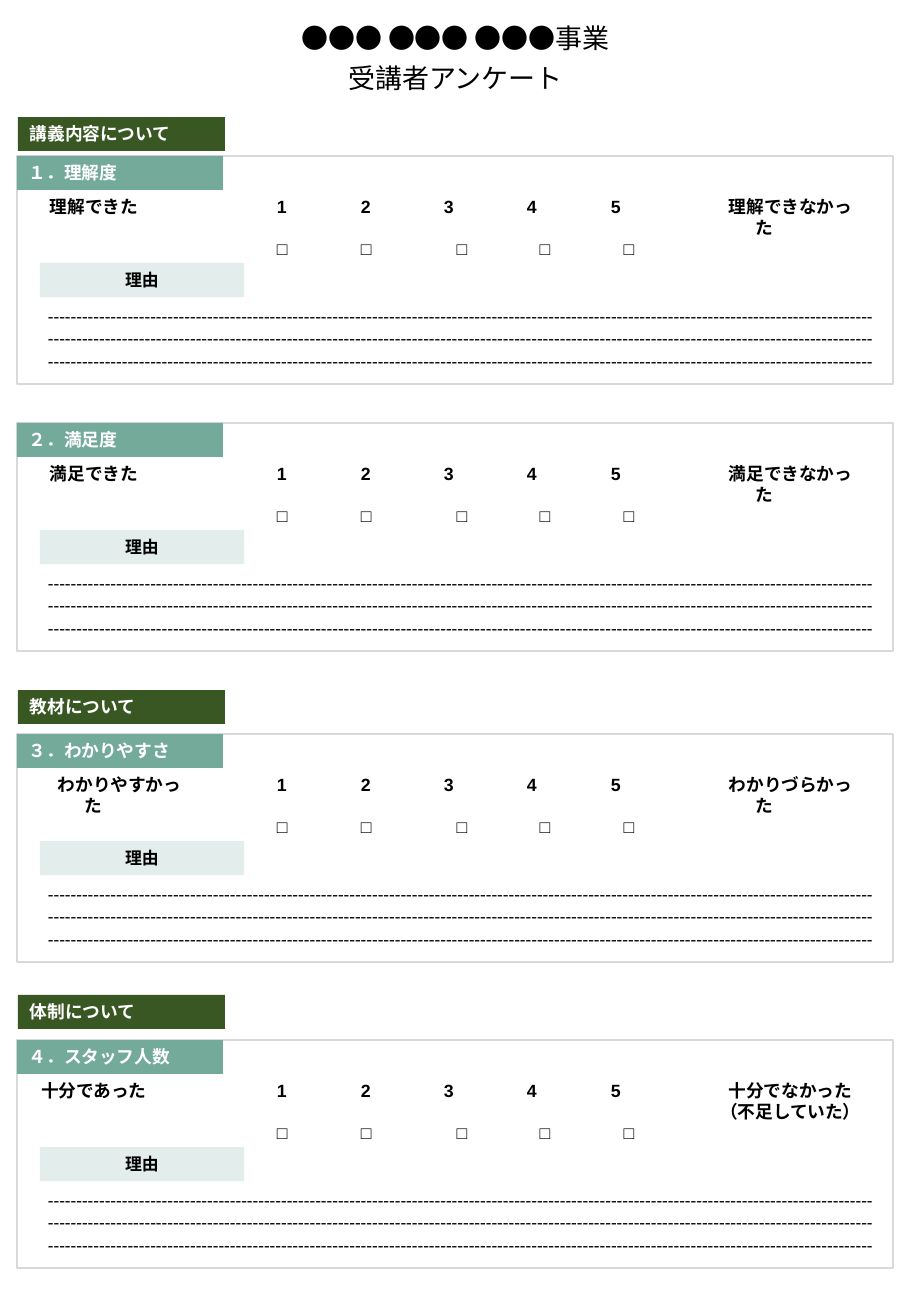
from pptx import Presentation
from pptx.dml.color import RGBColor
from pptx.enum.shapes import MSO_SHAPE
from pptx.enum.text import MSO_ANCHOR, MSO_AUTO_SIZE, PP_ALIGN
from pptx.oxml.ns import qn
from pptx.util import Pt

PX = 7526  # EMU per px, 121.5 px to the inch
THEME = {
    "black": RGBColor(0x00, 0x00, 0x00),
    "white": RGBColor(0xFF, 0xFF, 0xFF),
    "section": RGBColor(0x38, 0x57, 0x23),
    "question": RGBColor(0x74, 0xAA, 0x9A),
    "reason": RGBColor(0xE3, 0xED, 0xEB),
    "frame": RGBColor(0xD9, 0xD9, 0xD9),
    "title_font": "Noto Sans CJK JP",
    "body_font": "Arial",
    "reason_font": "Calibri",
    "title_size": 16,
    "body_size": 10.5,
    "reason_size": 10,
    "rule_size": 11,
}


def add_text(shapes, text, box, *, preset=None, fill=None, color="black",
             font="body_font", size="body_size", bold=True, align=PP_ALIGN.LEFT,
             middle=False, line_spacing=None, hang=0):
    """Add a text box, or a filled preset shape; hang indents wrapped lines in px."""
    bounds = [value * PX for value in box]
    if preset is None:
        shape = shapes.add_textbox(*bounds)
    else:
        shape = shapes.add_shape(preset, *bounds)
        shape.shadow.inherit = False
        shape.fill.solid()
        shape.fill.fore_color.rgb = THEME[fill]
        shape.line.fill.background()
    frame = shape.text_frame
    frame.text = text
    frame.word_wrap = True
    frame.vertical_anchor = MSO_ANCHOR.MIDDLE if middle else MSO_ANCHOR.TOP
    frame.auto_size = MSO_AUTO_SIZE.NONE if middle else MSO_AUTO_SIZE.SHAPE_TO_FIT_TEXT
    for paragraph in frame.paragraphs:
        paragraph.alignment = align
        if line_spacing:
            paragraph.line_spacing = line_spacing
        if hang:
            properties = paragraph._p.get_or_add_pPr()
            properties.set("marL", str(hang * PX))
            properties.set("indent", str(-hang * PX))
        for run in paragraph.runs:
            run.font.name = THEME[font]
            run.font.size = Pt(THEME[size])
            run.font.bold = bold
            run.font.color.rgb = THEME[color]
            east_asian = run._r.get_or_add_rPr().makeelement(
                qn("a:ea"), {"typeface": THEME["title_font"]})
            run.font._element.find(qn("a:latin")).addnext(east_asian)
    return shape


survey = Presentation()
survey.slide_width, survey.slide_height = 911 * PX, 1316 * PX
page = survey.slides.add_slide(survey.slide_layouts[6])

for heading, top, height in (("●●● ●●● ●●●事業", 2, 75), ("受講者アンケート", 62, 36)):
    add_text(page.shapes, heading, (0, top, 911, height), font="title_font",
             size="title_size", bold=False, align=PP_ALIGN.CENTER, middle=True,
             line_spacing=0.9)

for section, top in (("講義内容について", 117), ("教材について", 690), ("体制について", 995)):
    add_text(page.shapes, section, (18, top, 207, 34), preset=MSO_SHAPE.RECTANGLE,
             fill="section", color="white")

# Left, width and hanging indent of the labels at the two ends of the scale
LOW_SHORT, LOW_WRAPPED = (18, 152, 0), (46, 157, 27)
HIGH_WRAPPED, HIGH_TWO_LINES = (717, 157, 27), (688, 205, 0)
questions = (
    ("１．理解度", 156, ("理解できた", LOW_SHORT), ("理解できなかった", HIGH_WRAPPED)),
    ("２．満足度", 423, ("満足できた", LOW_SHORT), ("満足できなかった", HIGH_WRAPPED)),
    ("３．わかりやすさ", 734, ("わかりやすかった", LOW_WRAPPED),
     ("わかりづらかった", HIGH_WRAPPED)),
    ("４．スタッフ人数", 1040, ("十分であった", LOW_SHORT),
     ("十分でなかった\n（不足していた）", HIGH_TWO_LINES)),
)

for question, top, low, high in questions:
    block = page.shapes.add_group_shape().shapes
    border = block.add_shape(MSO_SHAPE.RECTANGLE, 17 * PX, top * PX, 876 * PX, 228 * PX)
    border.shadow.inherit = False
    border.fill.background()
    border.line.color.rgb = THEME["frame"]
    border.line.width = Pt(1)

    add_text(block, question, (17, top, 206, 34), preset=MSO_SHAPE.RECTANGLE,
             fill="question", color="white")
    reason = add_text(block, "理由", (40, top + 107, 204, 34), preset=MSO_SHAPE.PENTAGON,
                      fill="reason", font="reason_font", size="reason_size",
                      align=PP_ALIGN.CENTER, middle=True)
    reason.adjustments[0] = 0
    # Three writing lines of 145 dashes, wrapped by the box
    add_text(block, "-" * 145 * 3, (36, top + 143, 853, 80), font="reason_font",
             size="rule_size", bold=False)

    for label, (left, width, hang) in (low, high):
        add_text(block, label, (left, top + 34, width, 34), hang=hang,
                 align=PP_ALIGN.LEFT if hang else PP_ALIGN.CENTER)

    for score in range(1, 6):
        left = 265 + round(83.5 * (score - 1))
        add_text(block, str(score), (left, top + 34, 60, 34))
        add_text(block, "□", (left, top + 76, 60, 34),
                 align=PP_ALIGN.LEFT if score < 3 else PP_ALIGN.CENTER)

survey.save("out.pptx")
